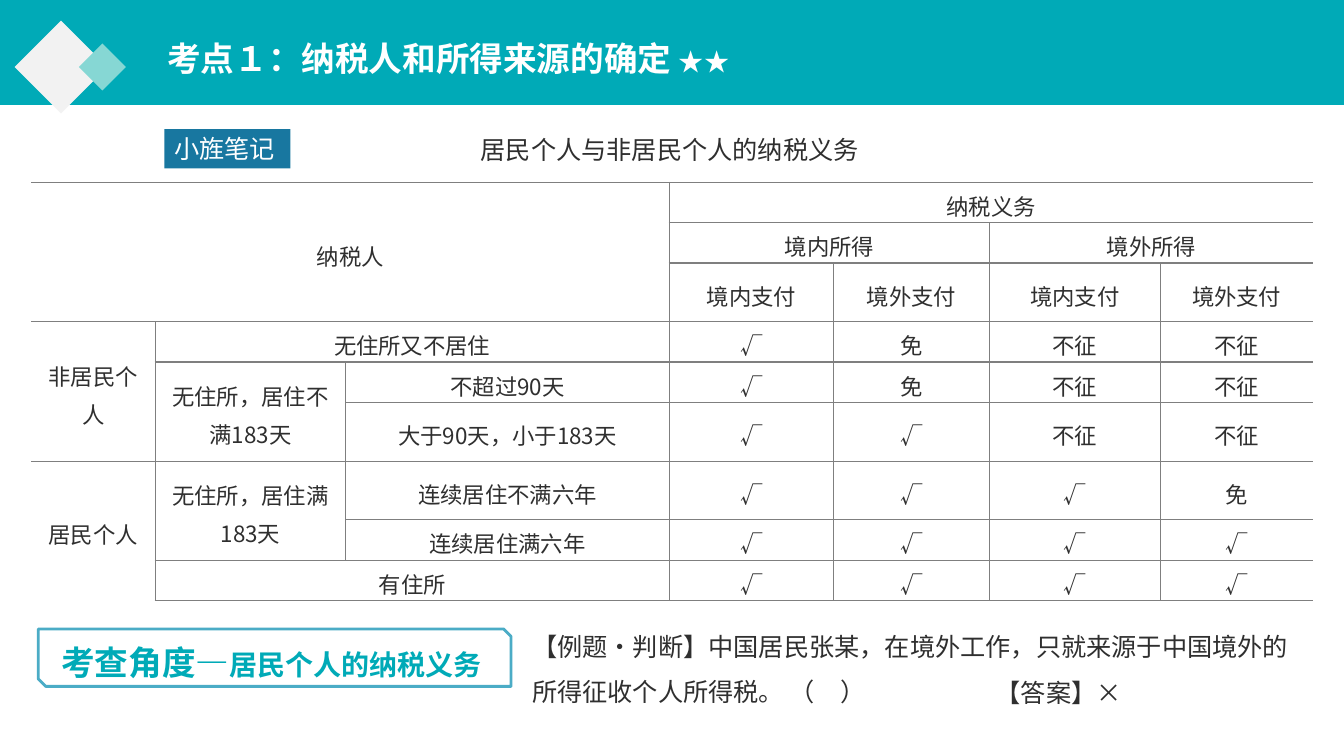
from itertools import product

from lxml.etree import SubElement
from pptx import Presentation
from pptx.dml.color import RGBColor
from pptx.enum.shapes import MSO_SHAPE as Preset
from pptx.enum.text import MSO_ANCHOR as Anchor, PP_ALIGN as Align
from pptx.oxml.ns import qn
from pptx.util import Inches, Pt

COLUMNS, ROWS = 160, 90
UNIT = Inches(13.333) / COLUMNS
TEAL, INK, WHITE, RULE = "00AAB7", "2F2F2F", "FFFFFF", "7F7F7F"
SANS, SERIF = "Noto Sans CJK SC", "Times New Roman"


def color(hex_code):
    return RGBColor.from_string(hex_code)


def grid(*lengths):
    """Turn grid units into slide lengths."""
    return [round(length * UNIT) for length in lengths]


def set_face(font, properties, face):
    """Use one face for Latin and East Asian characters."""
    font.name = face
    latin = properties.find(qn("a:latin"))
    east_asian = latin.makeelement(qn("a:ea"), {"typeface": face})
    latin.addnext(east_asian)


class Lesson:
    """Draws on one slide; places are (left, top, width, height) in grid units."""

    def __init__(self):
        self.deck = Presentation()
        self.deck.slide_width, self.deck.slide_height = grid(COLUMNS, ROWS)
        self.slide = self.deck.slides.add_slide(self.deck.slide_layouts[5])
        self.shapes = self.slide.shapes

    def fill_text(self, frame, runs, size=18, ink=INK, bold=False,
                  align=Align.LEFT, spacing=1.0):
        """Fill a frame; each run is (text, own size or None, own face or None)."""
        frame.word_wrap = True
        paragraph = frame.paragraphs[0]
        paragraph.alignment = align
        paragraph.line_spacing = spacing
        font = paragraph.font
        font.size, font.bold = Pt(size), bold
        font.color.rgb = color(ink)
        set_face(font, paragraph._p.pPr.find(qn("a:defRPr")), SANS)
        for text, own_size, own_face in runs:
            run = paragraph.add_run()
            run.text = text
            if own_size:
                run.font.size = Pt(own_size)
            if own_face:
                set_face(run.font, run._r.rPr, own_face)

    def shape(self, place, preset=Preset.RECTANGLE, fill=None, line=None, turn=0):
        shape = self.shapes.add_shape(preset, *grid(*place))
        shape.shadow.inherit = False
        shape.rotation = turn
        if fill:
            shape.fill.solid()
            shape.fill.fore_color.rgb = color(fill)
        else:
            shape.fill.background()
        if line:
            shape.line.color.rgb = color(line)
            shape.line.width = Pt(2)
        else:
            shape.line.fill.background()
        return shape

    def title(self, place, runs, **style):
        title = self.shapes.title
        title.left, title.top, title.width, title.height = grid(*place)
        title.text_frame.vertical_anchor = Anchor.TOP
        self.fill_text(title.text_frame, runs, **style)
        # Bring the title in front of the band
        self.shapes._spTree.append(title._element)

    def text(self, place, *runs, **style):
        box = self.shapes.add_textbox(*grid(*place))
        self.fill_text(box.text_frame, runs, **style)

    def border(self, cell, shown):
        properties = cell._tc.get_or_add_tcPr()
        for side in "LRTB":
            line = SubElement(properties, qn(f"a:ln{side}"), w=str(Pt(1)))
            if side in shown:
                fill = SubElement(line, qn("a:solidFill"))
                SubElement(fill, qn("a:srgbClr"), val=RULE)
            else:
                SubElement(line, qn("a:noFill"))
        cell.fill.background()

    def table(self, corner, widths, heights, texts, spans):
        """Draw a ruled table, open at both sides; spans maps (row, column) to its size."""
        place = grid(*corner, sum(widths), sum(heights))
        table = self.shapes.add_table(len(heights), len(widths), *place).table
        table.first_row = table.horz_banding = False
        for column, width in zip(table.columns, grid(*widths)):
            column.width = width
        for row, height in zip(table.rows, grid(*heights)):
            row.height = height
        for (top, left), text in texts.items():
            down, across = spans.get((top, left), (1, 1))
            bottom, right = top + down - 1, left + across - 1
            for row, column in product(range(top, bottom + 1), range(left, right + 1)):
                cell = table.cell(row, column)
                edges = {"L": column == left > 0,
                         "R": column == right < len(widths) - 1,
                         "T": row == top, "B": row == bottom}
                self.border(cell, [side for side, shown in edges.items() if shown])
                cell.margin_left = cell.margin_right = Inches(0.07)
                cell.margin_top = cell.margin_bottom = 0
                cell.vertical_anchor = Anchor.MIDDLE
            first = table.cell(top, left)
            self.fill_text(first.text_frame, [(text, None, None)], size=16,
                           align=Align.CENTER, spacing=1.2)
            if (down, across) != (1, 1):
                first.merge(table.cell(bottom, right))


def duty_texts():
    """Map (row, column) to the text of each cell that is not merged away."""
    yes, free, none = "√", "免", "不征"
    rows = [
        ["纳税人", None, None, "纳税义务", None, None, None],
        [None, None, None, "境内所得", None, "境外所得", None],
        [None, None, None] + ["境内支付", "境外支付"] * 2,
        ["非居民个人", "无住所又不居住", None, yes, free, none, none],
        [None, "无住所，居住不满183天", "不超过90天", yes, free, none, none],
        [None, None, "大于90天，小于183天", yes, yes, none, none],
        ["居民个人", "无住所，居住满183天", "连续居住不满六年", yes, yes, yes, free],
        [None, None, "连续居住满六年", yes, yes, yes, yes],
        [None, "有住所", None, yes, yes, yes, yes],
    ]
    return {(row, column): text for row, cells in enumerate(rows)
            for column, text in enumerate(cells) if text}


def main():
    lesson = Lesson()
    lesson.shape((0, 0, COLUMNS, 12.5), fill=TEAL)
    lesson.shape((3.36, 4.08, 7.8, 7.8), fill="F2F2F2", turn=45)
    lesson.shape((10.2, 6, 3.96, 3.96), fill="86D7D4", turn=45)
    lesson.title((18.72, 3.96, 72.6, 6),
                 [("考点１：纳税人和所得来源的确定 ", None, None), ("★★", 18, SERIF)],
                 size=24, ink=WHITE, bold=True)

    note_tag = lesson.shape((19.56, 15.36, 15, 4.68), fill="1877A0")
    lesson.fill_text(note_tag.text_frame, [("小旌笔记", None, None)], ink=WHITE)
    lesson.text((56.04, 13.56, 47.88, 6.48),
                ("居民个人与非居民个人的纳税义务", None, None), spacing=1.5)

    low, high = 4.8, 7
    lesson.table(
        (3.72, 21.72),
        widths=[14.76, 22.68, 38.52, 19.56, 18.6, 20.28, 18.24],
        heights=[low, low, high, low, low, high, high, low, low],
        texts=duty_texts(),
        spans={(0, 0): (3, 3), (0, 3): (1, 4), (1, 3): (1, 2), (1, 5): (1, 2),
               (3, 0): (3, 1), (3, 1): (1, 2), (4, 1): (2, 1),
               (6, 0): (3, 1), (6, 1): (2, 1), (8, 1): (1, 2)})

    lesson.text((6.12, 74.88, 53.4, 6.84),
                ("考查角度—", None, None), ("居民个人的纳税义务", 20, None),
                size=24, ink=TEAL, bold=True, spacing=1.2)
    angle_frame = lesson.shape((4.56, 74.88, 56.28, 6.84),
                               Preset.SNIP_2_DIAG_RECTANGLE, line="4BACC6")
    angle_frame.adjustments[0], angle_frame.adjustments[1] = 0, 0.13

    question = "【例题·判断】中国居民张某，在境外工作，只就来源于中国境外的所得征收个人所得税。 （　）"
    lesson.text((62.16, 72.72, 94.2, 12.12), (question, None, None), spacing=1.5)
    lesson.text((117.36, 80.04, 18.12, 4.68), ("【答案】×", None, None))
    lesson.deck.save("out.pptx")


if __name__ == "__main__":
    main()
